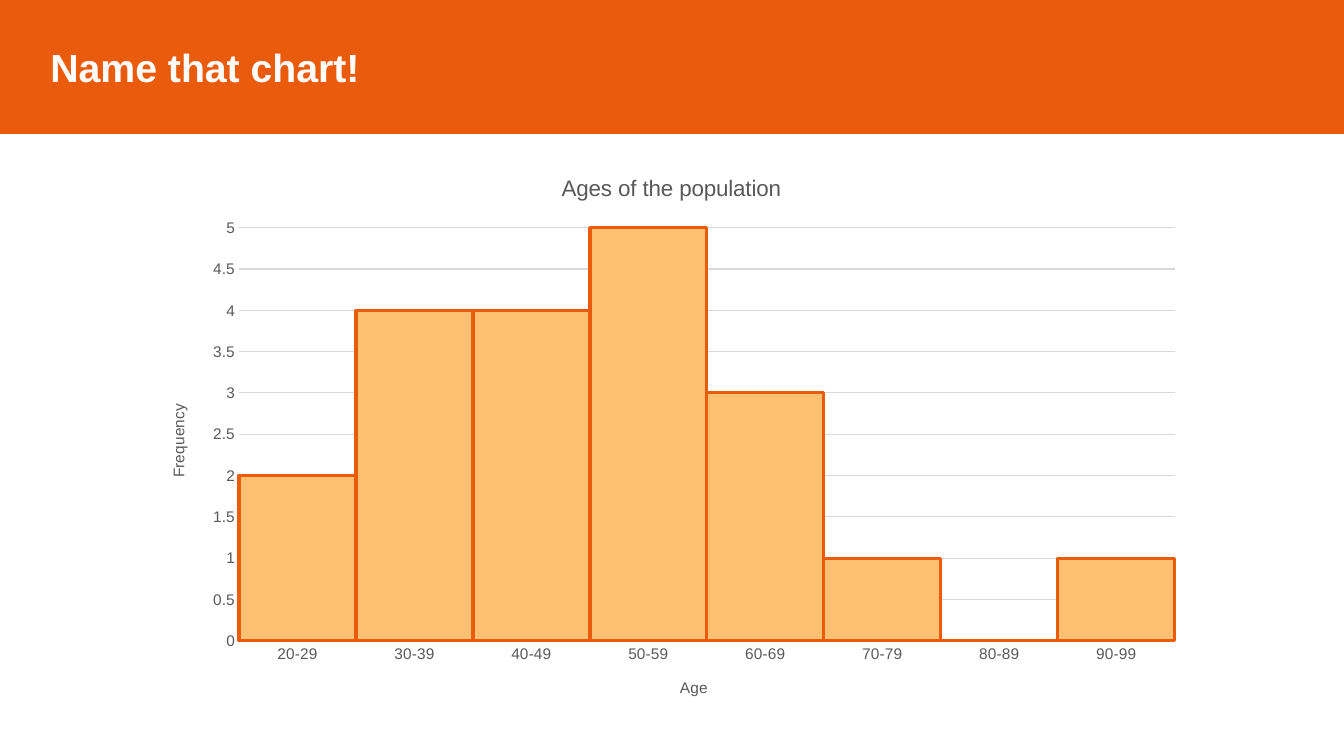
from pptx import Presentation
from pptx import util as u
from pptx.chart.data import CategoryChartData
from pptx.dml.color import RGBColor
from pptx.enum import chart as charts, text

PX = 9144  # 100 px to the inch
ORANGE, PEACH, GREY, RULE = "EA5B0C", "FFC071", "595959", "D9D9D9"


def color(hex_code):
    return RGBColor.from_string(hex_code)


def style(font, size, hex_code, bold=False):
    font.name, font.size, font.bold = "Arial", u.Pt(size), bold
    font.color.rgb = color(hex_code)


deck = Presentation()
deck.slide_width, deck.slide_height = 1333 * PX, 750 * PX
page = deck.slides.add_slide(deck.slide_layouts[5])

# Title banner
banner = page.shapes.title
banner.left, banner.top, banner.width, banner.height = 0, 0, 1333 * PX, 132 * PX
banner.fill.solid()
banner.fill.fore_color.rgb = color(ORANGE)
banner.line.color.rgb = color(ORANGE)
banner.line.width = u.Pt(1)
frame = banner.text_frame
frame.text = "Name that chart!"
frame.auto_size = text.MSO_AUTO_SIZE.NONE
frame.vertical_anchor = text.MSO_ANCHOR.MIDDLE
frame.margin_left = 50 * PX
para = frame.paragraphs[0]
para.alignment = text.PP_ALIGN.LEFT
style(para.runs[0].font, 28, "FFFFFF", bold=True)

# Histogram of ages, one bar per decade
ages = CategoryChartData()
ages.categories = [f"{start}-{start + 9}" for start in range(20, 100, 10)]
ages.add_series("Series 1", [2, 4, 4, 5, 3, 1, 0, 1])
histogram = page.shapes.add_chart(
    charts.XL_CHART_TYPE.COLUMN_CLUSTERED,
    146 * PX, 152 * PX, 1040 * PX, 560 * PX, ages).chart
style(histogram.font, 11, GREY)
histogram.has_legend = False

# Bars that touch
plot = histogram.plots[0]
plot.vary_by_categories = False
plot.gap_width, plot.overlap = 0, -27
bars = plot.series[0].format
bars.fill.solid()
bars.fill.fore_color.rgb = color(PEACH)
bars.line.color.rgb = color(ORANGE)
bars.line.width = u.Pt(2.25)

# Axes and gridlines
age_axis, frequency_axis = histogram.category_axis, histogram.value_axis
for axis in (age_axis, frequency_axis):
    axis.major_tick_mark = axis.minor_tick_mark = charts.XL_TICK_MARK.NONE
    style(axis.tick_labels.font, 11, GREY)
frequency_axis.minimum_scale, frequency_axis.maximum_scale = 0, 5
frequency_axis.major_unit = 0.5
frequency_axis.format.line.fill.background()
for line in (age_axis.format.line, frequency_axis.major_gridlines.format.line):
    line.color.rgb = color(RULE)
    line.width = u.Pt(0.75)

# Chart and axis titles
for owner, wording, size in ((histogram, "Ages of the population", 16),
                             (age_axis, "Age", 11),
                             (frequency_axis, "Frequency", 11)):
    owner.has_title = True
    heading = owner.chart_title if owner is histogram else owner.axis_title
    para = heading.text_frame.paragraphs[0]
    para.text = wording
    style(para.runs[0].font, size, GREY)

deck.save("out.pptx")
